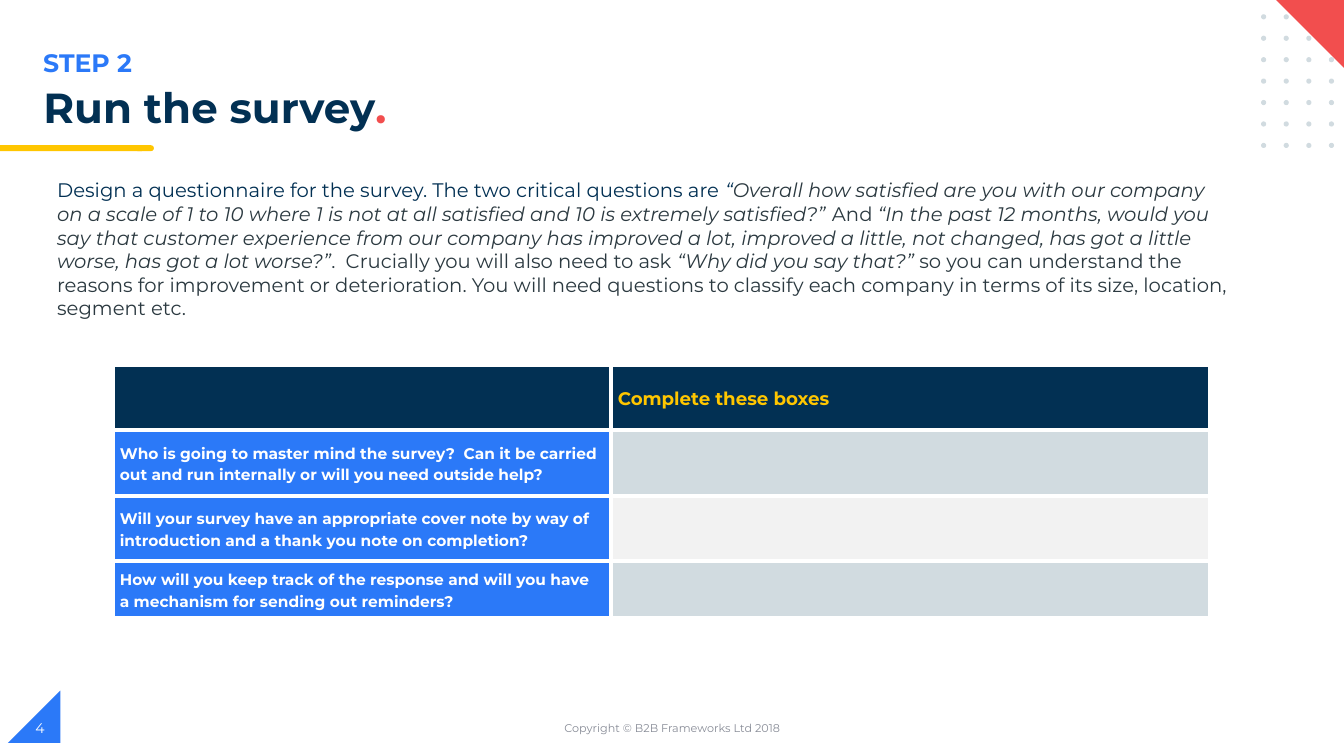
from dataclasses import dataclass
from typing import NamedTuple

from lxml.etree import SubElement
from pptx import Presentation
from pptx.dml.color import RGBColor
from pptx.enum.shapes import MSO_SHAPE as Preset
from pptx.enum.text import MSO_ANCHOR as Anchor, MSO_AUTO_SIZE as AutoSize, PP_ALIGN as Align
from pptx.oxml.ns import qn
from pptx.util import Cm, Pt


@dataclass(frozen=True)
class Theme:
    font: str = "Montserrat"
    navy: str = "023053"
    blue: str = "2B79F8"
    yellow: str = "FFC600"
    red: str = "F24E4E"
    slate: str = "2B3940"
    mist: str = "D1DBE0"
    pale: str = "F2F2F2"
    grey: str = "888C97"
    white: str = "FFFFFF"
    title_size: int = 30
    step_size: int = 18
    body_size: int = 14
    header_size: int = 13
    question_size: int = 11
    number_size: int = 10
    footer_size: int = 8


THEME = Theme()


class Area(NamedTuple):
    left: float
    top: float
    width: float
    height: float

    def lengths(self) -> list:
        return [Cm(value) for value in self]


class Span(NamedTuple):
    text: str
    color: str
    italic: bool = False


class Decoration(NamedTuple):
    preset: Preset
    area: Area
    color: str
    rotation: int = 0


class Row(NamedTuple):
    question: str
    answer: str
    question_fill: str
    answer_fill: str
    height: float


# Decorations
DOT_COLUMNS, DOT_ROWS = 4, 7
DOTS = [
    Decoration(Preset.OVAL, Area(31.78 + 0.57 * column, 0.36 + 0.54 * row, 0.13, 0.13), THEME.mist)
    for row in range(DOT_ROWS)
    for column in range(DOT_COLUMNS)
]
DECORATIONS = [
    Decoration(Preset.RIGHT_TRIANGLE, Area(0.2, 17.4, 1.32, 1.32), THEME.blue, 270),
    Decoration(Preset.FLOWCHART_TERMINATOR, Area(3.4, 3.66, 0.48, 0.15), THEME.yellow),
    Decoration(Preset.RECTANGLE, Area(0, 3.66, 3.58, 0.15), THEME.yellow),
    *DOTS,
    Decoration(Preset.RIGHT_TRIANGLE, Area(32.13, -0.03, 1.83, 1.83), THEME.red, 180),
]

# Wording
TITLE = [Span("Run the survey", THEME.navy), Span(".", THEME.red)]
GUIDANCE = [
    Span("Design a questionnaire for the survey. The two critical questions are ", THEME.navy),
    Span("“", THEME.navy, True),
    Span("Overall how satisfied are you with our company on a scale of 1 to 10 where 1 is not "
         "at all satisfied and 10 is extremely satisfied?” ", THEME.slate, True),
    Span("And ", THEME.slate),
    Span("“In the past 12 months, would you say that customer experience from our company has "
         "improved a lot, improved a little, not changed, has got a little worse, has got a lot "
         "worse?”", THEME.slate, True),
    Span(".  Crucially you will also need to ask ", THEME.slate),
    Span("“Why did you say that?” ", THEME.slate, True),
    Span("so you can understand the reasons for improvement or deterioration. You will need "
         "questions to classify each company in terms of its size, location, segment etc.",
         THEME.slate),
]
COLUMN_WIDTHS = [12.55, 15.11]
ROWS = [
    Row("", "Complete these boxes", THEME.navy, THEME.navy, 1.65),
    Row("Who is going to master mind the survey?  Can it be carried out and run internally or "
        "will you need outside help?", "", THEME.blue, THEME.mist, 1.65),
    Row("Will your survey have an appropriate cover note by way of introduction and a thank you "
        "note on completion?", "", THEME.blue, THEME.pale, 1.65),
    Row("How will you keep track of the response and will you have a mechanism for sending out "
        "reminders?", "", THEME.blue, THEME.mist, 1.42),
]


def write(frame, spans: list[Span], *, size: int, bold: bool = False, align=Align.LEFT,
          anchor=Anchor.TOP, line_spacing: float = 1.0) -> None:
    frame.word_wrap = True
    frame.vertical_anchor = anchor
    para = frame.paragraphs[0]
    para.alignment = align
    para.line_spacing = line_spacing
    for span in spans:
        run = para.add_run()
        run.text = span.text
        run.font.name = THEME.font
        run.font.size = Pt(size)
        run.font.bold = bold
        run.font.italic = span.italic
        run.font.color.rgb = RGBColor.from_string(span.color)


def add_text(page, area: Area, spans: list[Span], **text_format) -> None:
    box = page.shapes.add_textbox(*area.lengths())
    write(box.text_frame, spans, **text_format)


def add_title(page, area: Area, spans: list[Span]) -> None:
    title = page.shapes.title
    title.left, title.top, title.width, title.height = area.lengths()
    title.text_frame.auto_size = AutoSize.NONE
    write(title.text_frame, spans, size=THEME.title_size, bold=True, line_spacing=0.9)


def add_decoration(page, item: Decoration) -> None:
    shape = page.shapes.add_shape(item.preset, *item.area.lengths())
    shape.shadow.inherit = False
    shape.rotation = item.rotation
    shape.fill.solid()
    shape.fill.fore_color.rgb = RGBColor.from_string(item.color)
    shape.line.fill.background()


def format_cell(cell, fill: str) -> None:
    cell.margin_left = cell.margin_right = Cm(0.18)
    cell.margin_top = cell.margin_bottom = 0
    properties = cell._tc.get_or_add_tcPr()
    for side in ("lnL", "lnR", "lnT", "lnB"):
        border = SubElement(properties, qn(f"a:{side}"), w=str(Pt(3)))
        solid = SubElement(border, qn("a:solidFill"))
        SubElement(solid, qn("a:srgbClr"), val=THEME.white)
    cell.fill.solid()
    cell.fill.fore_color.rgb = RGBColor.from_string(fill)


def fill_cell(cell, text: str, fill: str, color: str, size: int) -> None:
    format_cell(cell, fill)
    if text:
        write(cell.text_frame, [Span(text, color)], size=size, bold=True, line_spacing=1.15)
    cell.vertical_anchor = Anchor.MIDDLE


def add_question_table(page, left: float, top: float, rows: list[Row]) -> None:
    area = Area(left, top, sum(COLUMN_WIDTHS), sum(row.height for row in rows))
    table = page.shapes.add_table(len(rows), len(COLUMN_WIDTHS), *area.lengths()).table
    for column, width in zip(table.columns, COLUMN_WIDTHS):
        column.width = Cm(width)
    for index, row in enumerate(rows):
        table.rows[index].height = Cm(row.height)
        fill_cell(table.cell(index, 0), row.question, row.question_fill,
                  THEME.white, THEME.question_size)
        fill_cell(table.cell(index, 1), row.answer, row.answer_fill,
                  THEME.yellow, THEME.header_size)


def main() -> None:
    deck = Presentation()
    deck.slide_width, deck.slide_height = Cm(33.87), Cm(19.05)
    page = deck.slides.add_slide(deck.slide_layouts.get_by_name("Title Only"))

    for item in DECORATIONS:
        add_decoration(page, item)

    # Heading and guidance
    add_text(page, Area(0.84, 1.07, 16.99, 1.02), [Span("STEP 2", THEME.blue)],
             size=THEME.step_size, bold=True)
    add_title(page, Area(0.84, 2.08, 28.32, 1.42), TITLE)
    add_text(page, Area(1.19, 4.37, 30.07, 3.86), GUIDANCE, size=THEME.body_size)

    add_question_table(page, 2.84, 9.19, ROWS)

    # Footer
    add_text(page, Area(11.23, 17.83, 11.43, 1.02),
             [Span("Copyright © B2B Frameworks Ltd 2018", THEME.grey)],
             size=THEME.footer_size, align=Align.CENTER, anchor=Anchor.MIDDLE)
    add_text(page, Area(0.64, 17.83, 7.62, 1.02), [Span("4", THEME.white)],
             size=THEME.number_size, anchor=Anchor.MIDDLE)

    deck.save("out.pptx")


if __name__ == "__main__":
    main()
